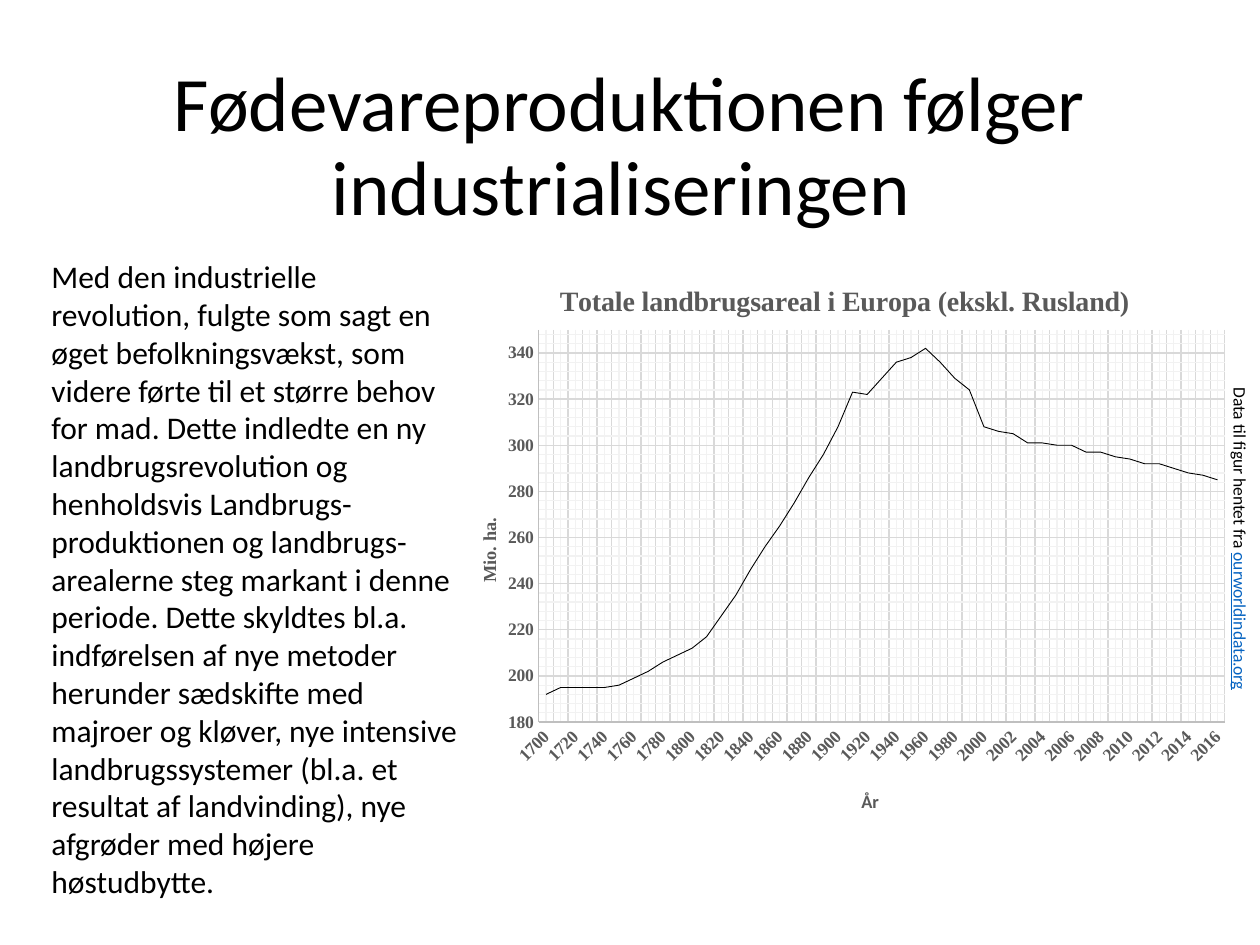
from lxml import etree
from pptx import Presentation
from pptx.chart.data import CategoryChartData
from pptx.dml.color import RGBColor
from pptx.enum.chart import XL_CHART_TYPE as ChartType, XL_TICK_MARK as Tick
from pptx.enum.text import MSO_ANCHOR as Anchor, PP_ALIGN as Align
from pptx.oxml.ns import qn
from pptx.util import Pt

PX = 914400 // 126
BLACK = RGBColor(0, 0, 0)
GRAY = RGBColor(0x59, 0x59, 0x59)
AXIS_GRAY = RGBColor(0xBF, 0xBF, 0xBF)
MAJOR_GRAY = RGBColor(0xD9, 0xD9, 0xD9)
MINOR_GRAY = RGBColor(0xF2, 0xF2, 0xF2)
LINK_BLUE = RGBColor(0x05, 0x63, 0xC1)
SERIF = "Times New Roman"


def set_font(font, size, color=BLACK, name="Calibri", bold=False):
    values = {"size": Pt(size), "name": name, "bold": bold}
    for key, value in values.items():
        setattr(font, key, value)
    font.color.rgb = color


def place(parent, before, **values):
    for old in parent.findall(qn("c:layout")):
        parent.remove(old)
    layout = etree.Element(qn("c:layout"))
    manual = etree.SubElement(layout, qn("c:manualLayout"))
    for key, value in values.items():
        etree.SubElement(manual, qn("c:" + key)).set("val", str(value))
    if before is None:
        parent.insert(0, layout)
    else:
        before.addnext(layout)


deck = Presentation()
deck.slide_width, deck.slide_height = 1260 * PX, 945 * PX
slide = deck.slides.add_slide(deck.slide_layouts[6])

heading = slide.shapes.add_textbox(111 * PX, 57 * PX, 1038 * PX, 183 * PX).text_frame
heading.word_wrap = True
heading.vertical_anchor = Anchor.MIDDLE
heading_line = heading.paragraphs[0]
heading_line.alignment = Align.CENTER
heading_line.line_spacing = 0.9
heading_run = heading_line.add_run()
heading_run.text = "Fødevareproduktionen følger industrialiseringen "
set_font(heading_run.font, 44)

story = slide.shapes.add_textbox(39 * PX, 251 * PX, 436 * PX, 661 * PX).text_frame
story.word_wrap = True
story_run = story.paragraphs[0].add_run()
story_run.text = (
    "Med den industrielle revolution, fulgte som sagt en øget befolkningsvækst, "
    "som videre førte til et større behov for mad. Dette indledte en ny "
    "landbrugsrevolution og henholdsvis Landbrugs- produktionen og landbrugs- "
    "arealerne steg markant i denne periode. Dette skyldtes bl.a. indførelsen af "
    "nye metoder herunder sædskifte med majroer og kløver, nye intensive "
    "landbrugssystemer (bl.a. et resultat af landvinding), nye afgrøder med "
    "højere høstudbytte."
)
set_font(story_run.font, 18)

farmland = CategoryChartData()
farmland.categories = [str(year) for year in [*range(1700, 2000, 10), *range(2000, 2017)]]
farmland.add_series("Landbrugsareal", [
    192, 195, 195, 195, 195, 196, 199, 202, 206, 209,
    212, 217, 226, 235, 246, 256, 265, 275, 286, 296,
    308, 323, 322, 329, 336, 338, 342, 336, 329, 324,
    308, 306, 305, 301, 301, 300, 300, 297, 297, 295,
    294, 292, 292, 290, 288, 287, 285,
])
chart = slide.shapes.add_chart(
    ChartType.LINE, 443 * PX, 255 * PX, 798 * PX, 577 * PX, farmland).chart
set_font(chart.font, 10)
chart.has_legend = False
chart.has_title = True
plot = chart.plots[0]
plot.vary_by_categories = False
area_line = plot.series[0]
area_line.smooth = False
area_line.format.line.color.rgb = BLACK
area_line.format.line.width = Pt(0.5)

years, hectares = chart.category_axis, chart.value_axis
scale = {"minimum_scale": 180, "maximum_scale": 350, "major_unit": 20, "minor_unit": 4}
for key, value in scale.items():
    setattr(hectares, key, value)

for axis in (years, hectares):
    axis.major_tick_mark = axis.minor_tick_mark = Tick.NONE
    axis.has_major_gridlines = axis.has_minor_gridlines = True
    axis.has_title = True
    set_font(axis.tick_labels.font, 10, GRAY, SERIF, True)
    for line, color in (
        (axis.format.line, AXIS_GRAY),
        (axis.major_gridlines.format.line, MAJOR_GRAY),
    ):
        line.color.rgb = color
        line.width = Pt(0.75)
    minor = axis._element.find(qn("c:minorGridlines"))
    minor_pr = etree.SubElement(minor, qn("c:spPr"))
    minor_line = etree.SubElement(minor_pr, qn("a:ln"), w=str(Pt(0.75)))
    minor_fill = etree.SubElement(minor_line, qn("a:solidFill"))
    etree.SubElement(minor_fill, qn("a:srgbClr"), val=str(MINOR_GRAY))

years_xml = years._element
years_xml.find(qn("c:txPr")).find(qn("a:bodyPr")).set("rot", "-2700000")
label_skip = etree.Element(qn("c:tickLblSkip"), val="2")
years_xml.find(qn("c:noMultiLvlLbl")).addprevious(label_skip)

for title, text, size, font_name, turn, x, y in (
    (chart.chart_title, "Totale landbrugsareal i Europa (ekskl. Rusland)", 16, SERIF, 0, 0.14, 0.04),
    (years.axis_title, "År", 10.5, "Calibri", 0, 0.52, 0.92),
    (hectares.axis_title, "Mio. ha.", 10.5, SERIF, -5400000, 0.04, 0.45),
):
    run = title.text_frame.paragraphs[0].add_run()
    run.text = text
    set_font(run.font, size, GRAY, font_name, True)
    title.text_frame._txBody.find(qn("a:bodyPr")).set("rot", str(turn))
    place(title._element, title._element.find(qn("c:tx")),
          xMode="edge", yMode="edge", x=x, y=y)

place(chart._chartSpace.chart.plotArea, None, layoutTarget="inner",
      xMode="edge", yMode="edge", x=0.12, y=0.13, w=0.86, h=0.68)

credit_box = slide.shapes.add_textbox(1085 * PX, 528 * PX, 311 * PX, 30 * PX)
credit_box.rotation = 90
credit = credit_box.text_frame
credit.word_wrap = True
credit.vertical_anchor = Anchor.MIDDLE
for side in ("left", "right", "top", "bottom"):
    setattr(credit, "margin_" + side, 0)
for text, color, underline in (
    ("Data til figur hentet fra ", BLACK, False),
    ("ourworldindata.org", LINK_BLUE, True),
):
    run = credit.paragraphs[0].add_run()
    run.text = text
    set_font(run.font, 10, color)
    run.font.underline = underline

deck.save("out.pptx")
